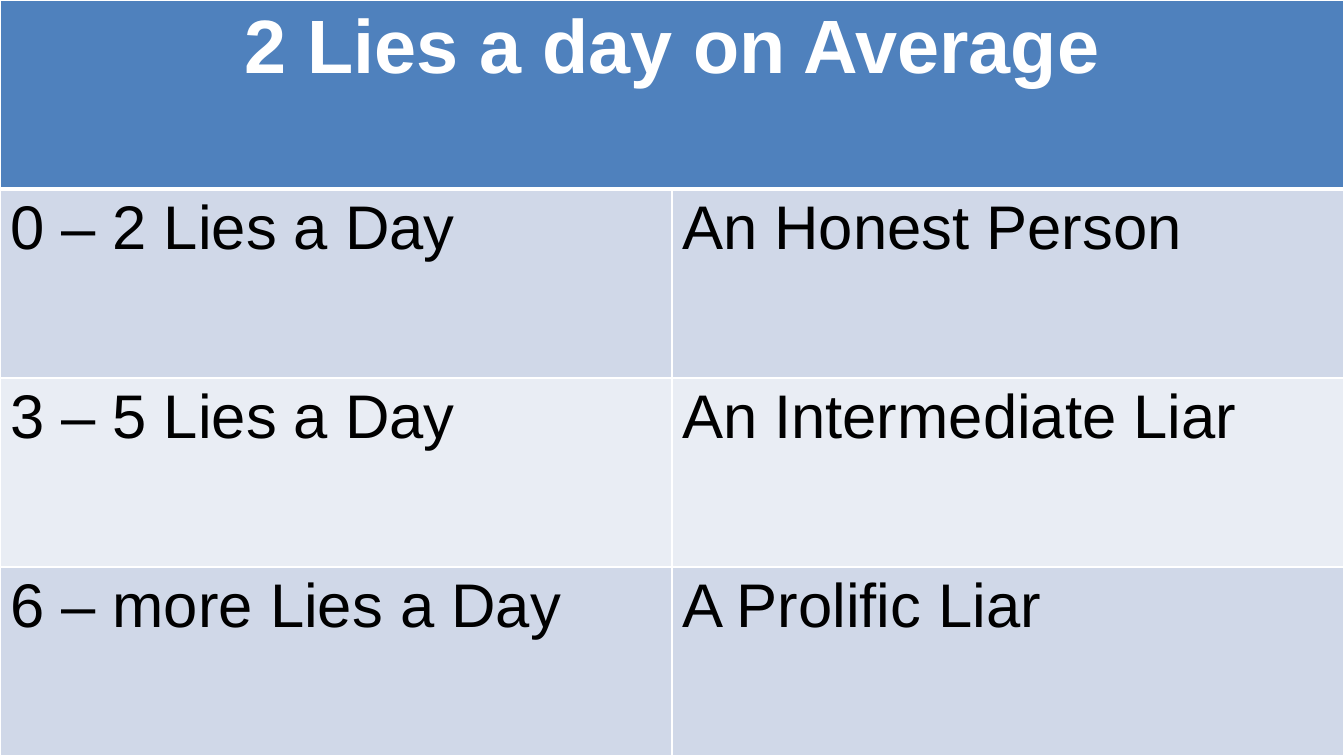
from lxml import etree
from pptx import Presentation
from pptx.dml.color import RGBColor
from pptx.enum.text import PP_ALIGN
from pptx.oxml.ns import qn
from pptx.util import Cm, Pt

CENTER = PP_ALIGN.CENTER
LEFT = PP_ALIGN.LEFT

WIDTH, HEIGHT = Cm(33.87), Cm(19.05)
TITLE = "2 Lies a day on Average"
LIAR_LEVELS = [
    ("0 – 2 Lies a Day", "An Honest Person"),
    ("3 – 5 Lies a Day", "An Intermediate Liar"),
    ("6 – more Lies a Day", "A Prolific Liar"),
]
HEADER_FILL = "4F81BD"
BAND_FILLS = ["D0D8E8", "E9EDF4"]
BORDER_COLOR = "FFFFFF"
THIN, THICK = Pt(1), Pt(3)
HEADER_FORMAT = {"name": "Arial", "size": Pt(54), "bold": True}
BODY_FORMAT = {"name": "Arial", "size": Pt(44), "bold": False}


def color(value):
    return RGBColor.from_string(value)


def set_borders(cell, top=THIN, bottom=THIN):
    properties = cell._tc.get_or_add_tcPr()
    widths = {"lnL": THIN, "lnR": THIN, "lnT": top, "lnB": bottom}
    for side, width in widths.items():
        line = etree.SubElement(properties, qn(f"a:{side}"), w=str(width))
        fill = etree.SubElement(line, qn("a:solidFill"))
        etree.SubElement(fill, qn("a:srgbClr"), val=BORDER_COLOR)


def fill_cell(cell, background):
    cell.fill.solid()
    cell.fill.fore_color.rgb = color(background)


def write_cell(cell, text, text_color, formats, alignment=LEFT):
    para = cell.text_frame.paragraphs[0]
    para.alignment = alignment
    span = para.add_run()
    span.text = text
    for attribute, value in formats.items():
        setattr(span.font, attribute, value)
    span.font.color.rgb = color(text_color)


def add_liar_table(page):
    row_count = len(LIAR_LEVELS) + 1
    table = page.shapes.add_table(row_count, 2, 0, 0, WIDTH, HEIGHT).table
    header = table.cell(0, 0)
    header.merge(table.cell(0, 1))
    for cell in table.rows[0].cells:
        set_borders(cell, bottom=THICK)
        fill_cell(cell, HEADER_FILL)
    write_cell(header, TITLE, "FFFFFF", HEADER_FORMAT, CENTER)

    for index, level in enumerate(LIAR_LEVELS):
        for cell, text in zip(table.rows[index + 1].cells, level):
            set_borders(cell, top=THIN if index else THICK)
            fill_cell(cell, BAND_FILLS[index % 2])
            write_cell(cell, text, "000000", BODY_FORMAT)


def main():
    deck = Presentation()
    deck.slide_width, deck.slide_height = WIDTH, HEIGHT
    page = deck.slides.add_slide(deck.slide_layouts[6])
    add_liar_table(page)
    deck.save("out.pptx")


if __name__ == "__main__":
    main()
